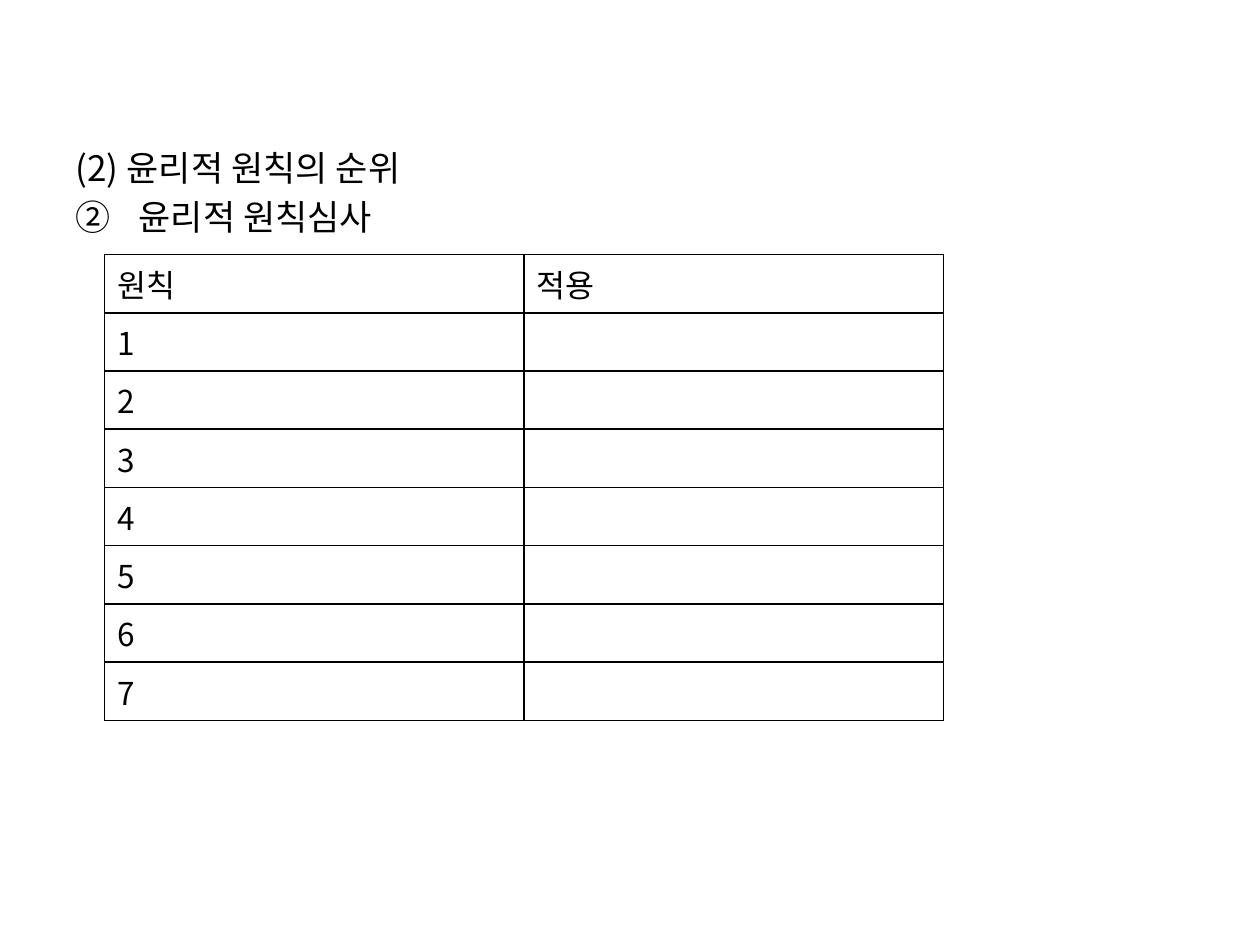
from lxml import etree
from pptx import Presentation
from pptx.dml.color import RGBColor
from pptx.enum.text import MSO_AUTO_SIZE, MSO_VERTICAL_ANCHOR
from pptx.oxml.ns import qn
from pptx.util import Inches, Pt

NO_FIT = MSO_AUTO_SIZE.NONE
TOP = MSO_VERTICAL_ANCHOR.TOP
BLACK = RGBColor(0, 0, 0)
FONT = "Noto Sans CJK KR"
CONTENT_LAYOUT = 1
HEADING, TOPIC = "(2) 윤리적 원칙의 순위", "윤리적 원칙심사"
ROWS = [("원칙", "적용")] + [(str(n), "") for n in range(1, 8)]
COL_W, ROW_H = Inches(3.33), Inches(0.41)


def add_run(p, text, size):
    r = p.add_run()
    r.text = text
    for name, value in {"name": FONT, "size": Pt(size), "bold": False}.items():
        setattr(r.font, name, value)
    r.font.color.rgb = BLACK
    etree.SubElement(r.font._element, qn("a:ea"), typeface=FONT)


def set_bullet(p, indent, tag, **attrs):
    pPr = p._p.get_or_add_pPr()
    pPr.set("marL", str(indent))
    pPr.set("indent", str(-indent))
    etree.SubElement(pPr, qn(tag), **attrs)


def add_headings(s):
    s.shapes.title.element.getparent().remove(s.shapes.title.element)
    body = s.placeholders[1]
    body.left, body.top = Inches(0.5), Inches(1.06)
    body.width, body.height = Inches(9), Inches(6.05)
    tf = body.text_frame
    for name, value in {"auto_size": NO_FIT, "vertical_anchor": TOP,
                        "word_wrap": True}.items():
        setattr(tf, name, value)
    heading, topic = tf.paragraphs[0], tf.add_paragraph()
    for p, text in ((heading, HEADING), (topic, TOPIC)):
        p.space_before, p.line_spacing = Pt(0), Pt(28)
        add_run(p, text, 20)
    set_bullet(heading, 0, "a:buNone")
    set_bullet(topic, Inches(0.5), "a:buAutoNum",
               type="circleNumDbPlain", startAt="2")


def set_borders(cell):
    tcPr = cell._tc.get_or_add_tcPr()
    for i, side in enumerate(("a:lnL", "a:lnR", "a:lnT", "a:lnB")):
        ln = etree.Element(qn(side), w=str(Pt(1)))
        fill = etree.SubElement(ln, qn("a:solidFill"))
        etree.SubElement(fill, qn("a:srgbClr"), val=str(BLACK))
        tcPr.insert(i, ln)


def add_principles_table(s):
    table = s.shapes.add_table(len(ROWS), 2, Inches(0.83), Inches(2.02),
                               2 * COL_W, len(ROWS) * ROW_H).table
    table.first_row = table.horz_banding = False
    for col in table.columns:
        col.width = COL_W
    for row, texts in zip(table.rows, ROWS):
        row.height = ROW_H
        for cell, text in zip(row.cells, texts):
            cell.fill.background()
            set_borders(cell)
            if text:
                add_run(cell.text_frame.paragraphs[0], text, 18)


def main():
    prs = Presentation()
    prs.slide_width, prs.slide_height = Inches(10), Inches(7.5)
    s = prs.slides.add_slide(prs.slide_layouts[CONTENT_LAYOUT])
    add_headings(s)
    add_principles_table(s)
    prs.save("out.pptx")


if __name__ == "__main__":
    main()
